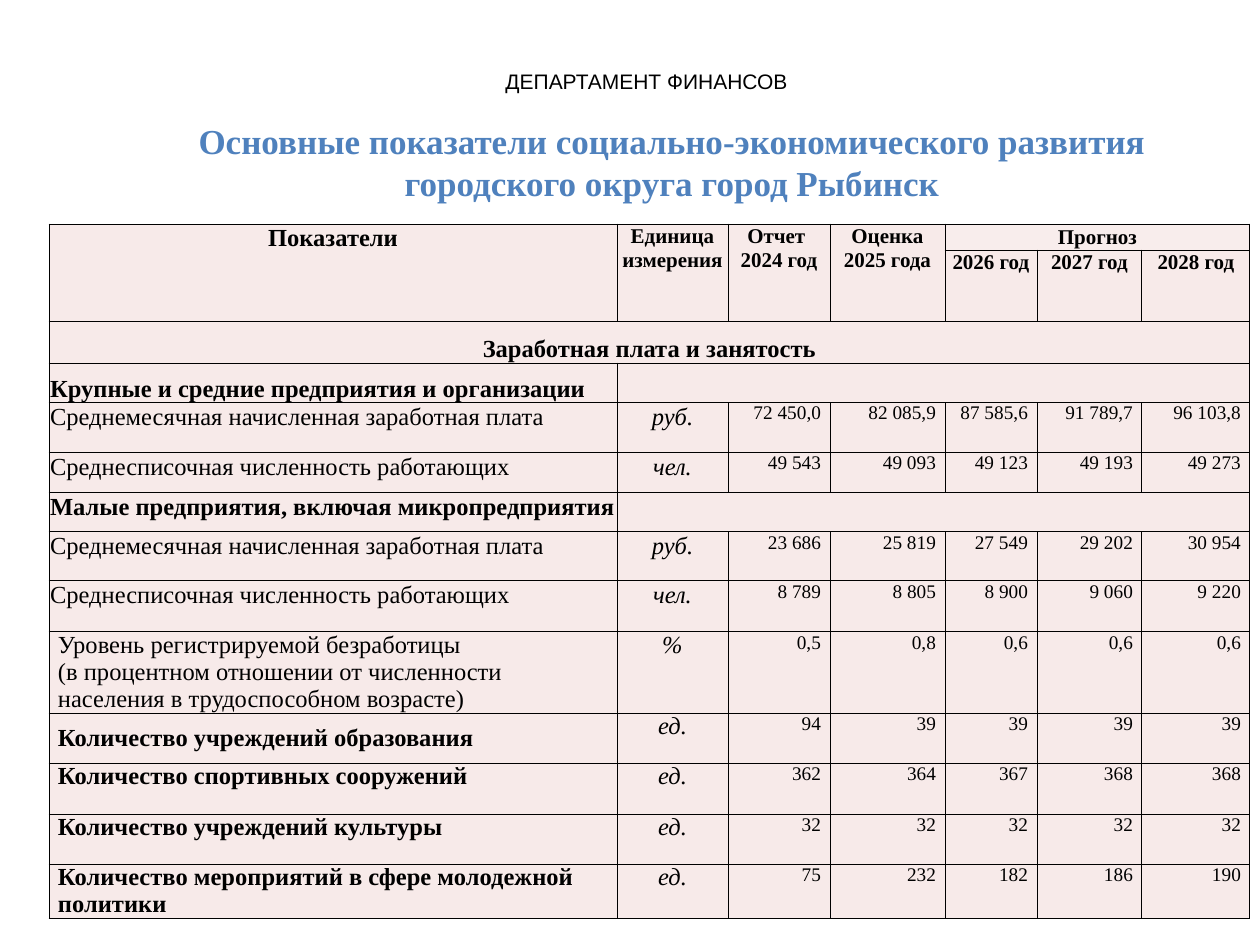
import pptx
import pptx.dml.color
import pptx.enum.text
import pptx.oxml
import pptx.oxml.ns
import pptx.util

EMU_PER_PX = 914400 / 126
COLORS = {"text": "000000", "title": "4F81BD", "cell": "F7EAE9", "forecast": "F8EDEC", "border": "000000"}
SERIF = "Times New Roman"
ALIGN = pptx.enum.text.PP_ALIGN
ANCHOR = pptx.enum.text.MSO_ANCHOR
COLUMN_WIDTHS = [568, 111, 102, 115, 92, 105, 108]
ROW_HEIGHTS = [26, 71, 42, 38, 50, 40, 38, 49, 51, 81, 50, 51, 50, 54]
MERGES = [(0, 0, 1, 0), (0, 1, 1, 1), (0, 2, 1, 2), (0, 3, 1, 3), (0, 4, 0, 6),
          (2, 0, 2, 6), (3, 1, 3, 6), (6, 1, 6, 6)]
HEADINGS = [(0, 1, "Единица измерения"), (0, 2, "Отчет \n2024 год"), (0, 3, "Оценка 2025 года"),
            (0, 4, "Прогноз"), (1, 4, "2026 год"), (1, 5, "2027 год"), (1, 6, "2028 год")]
SECTIONS = [(0, "Показатели", ALIGN.CENTER, ANCHOR.TOP),
            (2, "Заработная плата и занятость", ALIGN.CENTER, ANCHOR.BOTTOM),
            (3, "Крупные и средние предприятия и организации", ALIGN.LEFT, ANCHOR.BOTTOM),
            (6, "Малые предприятия, включая микропредприятия", ALIGN.LEFT, ANCHOR.TOP)]
WAGE = "Среднемесячная начисленная заработная плата"
STAFF = "Среднесписочная численность работающих"
UNEMPLOYMENT = ("Уровень регистрируемой безработицы\n"
                "(в процентном отношении от численности населения в трудоспособном возрасте)")
INDICATORS = {
    4: (WAGE, "руб.", ["72 450,0", "82 085,9", "87 585,6", "91 789,7", "96 103,8"]),
    5: (STAFF, "чел.", ["49 543", "49 093", "49 123", "49 193", "49 273"]),
    7: (WAGE, "руб.", ["23 686", "25 819", "27 549", "29 202", "30 954"]),
    8: (STAFF, "чел.", ["8 789", "8 805", "8 900", "9 060", "9 220"]),
    9: (UNEMPLOYMENT, "%", ["0,5", "0,8", "0,6", "0,6", "0,6"]),
    10: ("Количество учреждений образования", "ед.", ["94", "39", "39", "39", "39"]),
    11: ("Количество спортивных сооружений", "ед.", ["362", "364", "367", "368", "368"]),
    12: ("Количество учреждений культуры", "ед.", ["32", "32", "32", "32", "32"]),
    13: ("Количество мероприятий в сфере молодежной политики", "ед.", ["75", "232", "182", "186", "190"]),
}


def px(length):
    """Turn pixels into EMU."""
    return pptx.util.Emu(round(length * EMU_PER_PX))


def write_text(frame, text, size, align=ALIGN.LEFT, color="text", **style):
    """Write one paragraph per line of text in a single format."""
    frame.word_wrap = True
    for index, line in enumerate(text.split("\n")):
        para = frame.paragraphs[0] if index == 0 else frame.add_paragraph()
        para.alignment = align
        span = para.add_run()
        span.text = line
        span.font.color.rgb = pptx.dml.color.RGBColor.from_string(COLORS[color])
        for name, value in {"name": SERIF, "size": pptx.util.Pt(size), **style}.items():
            setattr(span.font, name, value)


def add_text_box(page, bounds, text, size, anchor=ANCHOR.TOP, **style):
    """Add a centred text box."""
    box = page.shapes.add_textbox(*map(px, bounds))
    box.text_frame.vertical_anchor = anchor
    write_text(box.text_frame, text, size, ALIGN.CENTER, **style)


def set_margins(cell, side, top):
    """Set the cell insets in pixels."""
    insets = {"margin_left": side, "margin_right": side, "margin_top": top, "margin_bottom": 0}
    for name, value in insets.items():
        setattr(cell, name, px(value))


def style_cell(cell, color="cell"):
    """Give a cell its fill, thin borders and insets."""
    set_margins(cell, 1, 1)
    properties = cell._tc.get_or_add_tcPr()
    for edge in ("lnL", "lnR", "lnT", "lnB"):
        properties.append(pptx.oxml.parse_xml(
            f'<a:{edge} {pptx.oxml.ns.nsdecls("a")} w="{pptx.util.Pt(0.5)}"><a:solidFill>'
            f'<a:srgbClr val="{COLORS["border"]}"/></a:solidFill></a:{edge}>'))
    cell.fill.solid()
    cell.fill.fore_color.rgb = pptx.dml.color.RGBColor.from_string(COLORS[color])


def add_grid(page):
    """Add the empty table with its merged cells."""
    bounds = (49, 224, sum(COLUMN_WIDTHS), sum(ROW_HEIGHTS))
    table = page.shapes.add_table(len(ROW_HEIGHTS), len(COLUMN_WIDTHS), *map(px, bounds)).table
    table.first_row = table.horz_banding = False
    for column, width in zip(table.columns, COLUMN_WIDTHS):
        column.width = px(width)
    for row, height in zip(table.rows, ROW_HEIGHTS):
        row.height = px(height)
    for row in range(len(ROW_HEIGHTS)):
        for column in range(len(COLUMN_WIDTHS)):
            style_cell(table.cell(row, column), "forecast" if row == 0 and column > 3 else "cell")
    for top, left, bottom, right in MERGES:
        table.cell(top, left).merge(table.cell(bottom, right))
    return table


def fill_headings(table):
    """Write the column headings and section titles."""
    for row, column, text in HEADINGS:
        write_text(table.cell(row, column).text_frame, text, 12, ALIGN.CENTER, bold=True)
    table.cell(0, 4).vertical_anchor = ANCHOR.MIDDLE
    for row, text, align, anchor in SECTIONS:
        cell = table.cell(row, 0)
        cell.vertical_anchor = anchor
        write_text(cell.text_frame, text, 14, align, bold=True)


def fill_indicators(table):
    """Write the name, unit and yearly values of each indicator."""
    for row, (name, unit, values) in INDICATORS.items():
        cells = [table.cell(row, column) for column in range(len(COLUMN_WIDTHS))]
        for cell in cells if row > 8 else cells[2:]:
            set_margins(cell, 9, 0)
        write_text(cells[0].text_frame, name, 14, bold=row > 9)
        write_text(cells[1].text_frame, unit, 14, ALIGN.CENTER, italic=True)
        for cell, value in zip(cells[2:], values):
            write_text(cell.text_frame, value, 11, ALIGN.RIGHT)
    table.cell(10, 0).vertical_anchor = ANCHOR.MIDDLE


def main():
    """Build and save the slide."""
    deck = pptx.Presentation()
    deck.slide_width, deck.slide_height = px(1260), px(945)
    page = deck.slides.add_slide(deck.slide_layouts[6])
    table = add_grid(page)
    fill_headings(table)
    fill_indicators(table)
    add_text_box(page, (451, 62, 397, 38), "ДЕПАРТАМЕНТ ФИНАНСОВ ", 12, name="Arial")
    add_text_box(page, (105, 82, 1134, 158),
                 "Основные показатели социально-экономического развития городского округа город Рыбинск",
                 20, ANCHOR.MIDDLE, color="title", bold=True)
    deck.save("out.pptx")


if __name__ == "__main__":
    main()
